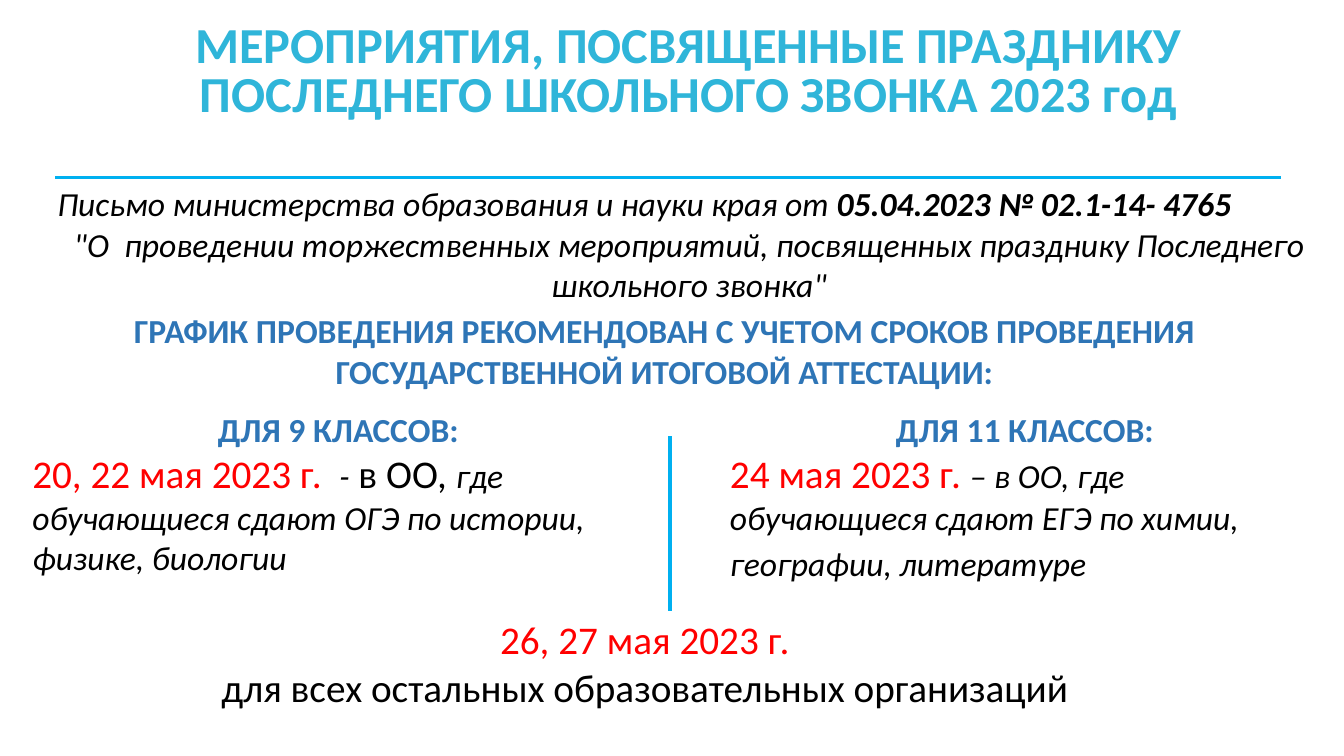
from dataclasses import dataclass

from lxml import etree
from pptx import Presentation
from pptx.dml.color import RGBColor
from pptx.enum.shapes import MSO_CONNECTOR
from pptx.enum.text import MSO_ANCHOR, MSO_AUTO_SIZE, PP_ALIGN
from pptx.oxml.ns import qn
from pptx.util import Inches, Pt

CENTER, LEFT = PP_ALIGN.CENTER, PP_ALIGN.LEFT
TOP, FIXED = MSO_ANCHOR.TOP, MSO_AUTO_SIZE.NONE
STRAIGHT = MSO_CONNECTOR.STRAIGHT
TWO_PARTS = 3
WIDE, HIGH = 13.33, 7.5


@dataclass(frozen=True)
class Theme:
    font: str = "Calibri"
    title: str = "2FB5D9"
    head: str = "2E75B6"
    date: str = "FF0000"
    text: str = "000000"
    rule: str = "00B0F0"
    large: int = 36
    mid: int = 28
    small: int = 24
    line: float = 2.25


THEME = Theme()
TITLE = dict(size=THEME.large, color=THEME.title, bold=True)
HEAD = dict(size=THEME.small, color=THEME.head, bold=True)
DATE = dict(size=THEME.mid, color=THEME.date)
PLAIN = dict(size=THEME.mid, color=THEME.text)
NOTE = dict(size=THEME.small, color=THEME.text, italic=True)
STRONG = dict(NOTE, bold=True)


def place(shape, box):
    for name, size in zip(("left", "top", "width", "height"), box):
        setattr(shape, name, Inches(size))


def style(font, look):
    values = dict(name=THEME.font, bold=False, italic=False) | look
    font.color.rgb = RGBColor.from_string(values.pop("color"))
    values["size"] = Pt(values["size"])
    for name, value in values.items():
        setattr(font, name, value)


def write(shape, paras, space=1.0):
    """Fill a shape with paragraphs, each an alignment and (text, look) runs."""
    frame = shape.text_frame
    form = dict(word_wrap=True, auto_size=FIXED, vertical_anchor=TOP)
    for name, value in form.items():
        setattr(frame, name, value)
    for index, (align, runs) in enumerate(paras):
        para = frame.add_paragraph() if index else frame.paragraphs[0]
        form = dict(alignment=align, line_spacing=space,
                    space_before=Pt(0), space_after=Pt(0))
        for name, value in form.items():
            setattr(para, name, value)
        for text, look in runs:
            run = para.add_run()
            run.text = text
            style(run.font, look)


def plain(shape):
    """Take bullets and indents off every paragraph."""
    for para in shape.text_frame.paragraphs:
        props = para._p.get_or_add_pPr()
        props.set("marL", "0")
        props.set("indent", "0")
        etree.SubElement(props, qn("a:buNone"))


def rule(slide, box):
    left, top, width, height = box
    line = slide.shapes.add_connector(
        STRAIGHT, Inches(left), Inches(top),
        Inches(left + width), Inches(top + height))
    line.line.color.rgb = RGBColor.from_string(THEME.rule)
    line.line.width = Pt(THEME.line)
    etree.SubElement(line._element.spPr, qn("a:effectLst"))


def header(slide, box):
    left, top, width, height = box
    title = slide.shapes.title
    place(title, box)
    write(title, [(CENTER, [(
        "МЕРОПРИЯТИЯ, ПОСВЯЩЕННЫЕ ПРАЗДНИКУ ПОСЛЕДНЕГО "
        "ШКОЛЬНОГО ЗВОНКА 2023 год", TITLE)])], 0.8)
    rule(slide, (left + 0.22, top + height + 0.11, 12.16, 0))


def block(slide, box, paras):
    shape = slide.shapes.add_textbox(0, 0, 0, 0)
    place(shape, box)
    write(shape, paras)


def grades(slide, box):
    """Two columns of dates with a rule between them."""
    left, top, width, height = box
    parts = [
        ("ДЛЯ 9 КЛАССОВ:", 0, 6.27, [
            ("20, 22 мая 2023 г.  ", DATE), ("-", NOTE), (" в ОО, ", PLAIN),
            ("где обучающиеся сдают ОГЭ по истории, физике, биологии", NOTE)]),
        ("ДЛЯ 11 КЛАССОВ:", width - 6.05, 6.05, [
            ("24 мая 2023 г. ", DATE),
            ("– в ОО, где обучающиеся сдают ЕГЭ по химии, "
             "географии, литературе", NOTE), (" ", DATE)]),
    ]
    bodies = list(slide.placeholders)[1:]
    for body, (head, shift, wide, runs) in zip(bodies, parts):
        place(body, (left + shift, top, wide, height))
        write(body, [(CENTER, [(head, HEAD)]), (LEFT, runs)])
        plain(body)
    rule(slide, (WIDE / 2 - 0.02, top + 0.32, 0, 1.73))


def main():
    deck = Presentation()
    deck.slide_width, deck.slide_height = Inches(WIDE), Inches(HIGH)
    slide = deck.slides.add_slide(deck.slide_layouts[TWO_PARTS])
    header(slide, (0.33, 0.2, 13, 1.45))
    block(slide, (0.47, 1.77, 12.73, 1.31), [(CENTER, [
        ("Письмо министерства образования и науки края от ", NOTE),
        ("05.04.2023 № 02.1-14- 4765\n", STRONG),
        ("\"О  проведении торжественных мероприятий, посвященных "
         "празднику Последнего школьного звонка\"", NOTE)])])
    block(slide, (0.26, 3.03, 12.66, 0.91), [
        (CENTER, [(text, HEAD)]) for text in (
            "ГРАФИК ПРОВЕДЕНИЯ РЕКОМЕНДОВАН С УЧЕТОМ СРОКОВ ПРОВЕДЕНИЯ",
            "ГОСУДАРСТВЕННОЙ ИТОГОВОЙ АТТЕСТАЦИИ:")])
    grades(slide, (0.22, 4.01, 12.97, 1.85))
    block(slide, (1.08, 6.06, 10.63, 1.04), [
        (CENTER, [("26, 27 мая 2023 г.", DATE)]),
        (CENTER, [("для всех остальных образовательных организаций", PLAIN)])])
    deck.save("out.pptx")


if __name__ == "__main__":
    main()
